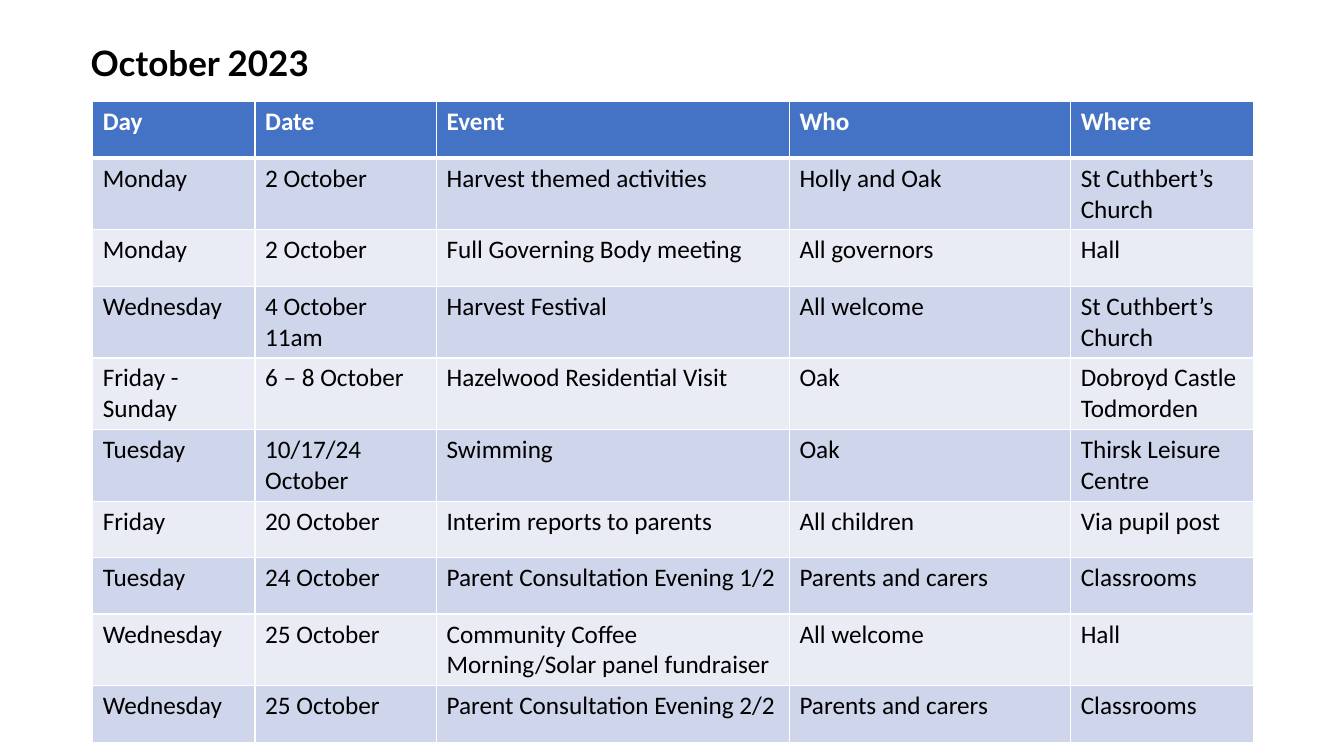
from dataclasses import dataclass

from lxml.etree import SubElement
from pptx import Presentation
from pptx.dml.color import RGBColor
from pptx.enum.text import MSO_AUTO_SIZE as AutoSize
from pptx.oxml.ns import qn
from pptx.util import Inches, Pt

TITLE = "October 2023"
HEADINGS = ("Day", "Date", "Event", "Who", "Where")
EVENTS = [
    ("Monday", "2 October", "Harvest themed activities", "Holly and Oak", "St Cuthbert’s Church"),
    ("Monday", "2 October", "Full Governing Body meeting", "All governors", "Hall"),
    ("Wednesday", "4 October\n11am", "Harvest Festival", "All welcome", "St Cuthbert’s Church"),
    ("Friday - Sunday", "6 – 8 October", "Hazelwood Residential Visit", "Oak",
     "Dobroyd Castle Todmorden"),
    ("Tuesday", "10/17/24 October", "Swimming", "Oak", "Thirsk Leisure Centre"),
    ("Friday", "20 October", "Interim reports to parents", "All children", "Via pupil post"),
    ("Tuesday", "24 October", "Parent Consultation Evening 1/2", "Parents and carers", "Classrooms"),
    ("Wednesday", "25 October", "Community Coffee Morning/Solar panel fundraiser",
     "All welcome", "Hall"),
    ("Wednesday", "25 October", "Parent Consultation Evening 2/2", "Parents and carers", "Classrooms"),
]
COLUMN_WIDTHS = (1.61, 1.8, 3.5, 2.79, 1.81)
ROW_HEIGHT = 0.56


@dataclass(frozen=True)
class Theme:
    title_font: str = "Lato"
    table_font: str = "Calibri"
    title_size: int = 25
    table_size: int = 18
    text: str = "000000"
    heading_text: str = "FFFFFF"
    heading_fill: str = "4472C4"
    bands: tuple = ("CFD5EA", "E9EBF5")
    border: str = "FFFFFF"
    thin: int = 1
    thick: int = 3


THEME = Theme()


def format_text(frame, font, size, color, bold):
    for para in frame.paragraphs:
        for span in para.runs:
            span.font.name = font
            span.font.size = Pt(size)
            span.font.bold = bold
            span.font.color.rgb = RGBColor.from_string(color)


def set_borders(cell, top, bottom):
    """Draw all four cell edges; must run before the cell is filled."""
    properties = cell._tc.get_or_add_tcPr()
    widths = {"a:lnL": THEME.thin, "a:lnR": THEME.thin, "a:lnT": top, "a:lnB": bottom}
    for tag, width in widths.items():
        line = SubElement(properties, qn(tag), w=str(Pt(width)))
        fill = SubElement(line, qn("a:solidFill"))
        SubElement(fill, qn("a:srgbClr"), val=THEME.border)


def add_title(page):
    box = page.shapes.add_textbox(Inches(0.8), Inches(0.36), Inches(4.45), Inches(0.52))
    frame = box.text_frame
    frame.word_wrap = True
    frame.auto_size = AutoSize.SHAPE_TO_FIT_TEXT
    frame.text = TITLE
    format_text(frame, THEME.title_font, THEME.title_size, THEME.text, True)


def add_calendar(page):
    rows = [HEADINGS, *EVENTS]
    calendar = page.shapes.add_table(
        len(rows), len(HEADINGS), Inches(0.92), Inches(1.01),
        Inches(sum(COLUMN_WIDTHS)), Inches(ROW_HEIGHT * len(rows))).table
    for column, width in zip(calendar.columns, COLUMN_WIDTHS):
        column.width = Inches(width)
    for index, values in enumerate(rows):
        calendar.rows[index].height = Inches(ROW_HEIGHT)
        heading = index == 0
        fill = THEME.heading_fill if heading else THEME.bands[(index - 1) % 2]
        color = THEME.heading_text if heading else THEME.text
        top = THEME.thick if index == 1 else THEME.thin
        bottom = THEME.thick if heading else THEME.thin
        for cell, value in zip(calendar.rows[index].cells, values):
            cell.text_frame.text = value
            format_text(cell.text_frame, THEME.table_font, THEME.table_size, color, heading)
            set_borders(cell, top, bottom)
            cell.fill.solid()
            cell.fill.fore_color.rgb = RGBColor.from_string(fill)


def main():
    deck = Presentation()
    deck.slide_width, deck.slide_height = Inches(13.33), Inches(7.5)
    page = deck.slides.add_slide(deck.slide_layouts[6])
    add_calendar(page)
    add_title(page)
    deck.save("out.pptx")


if __name__ == "__main__":
    main()
